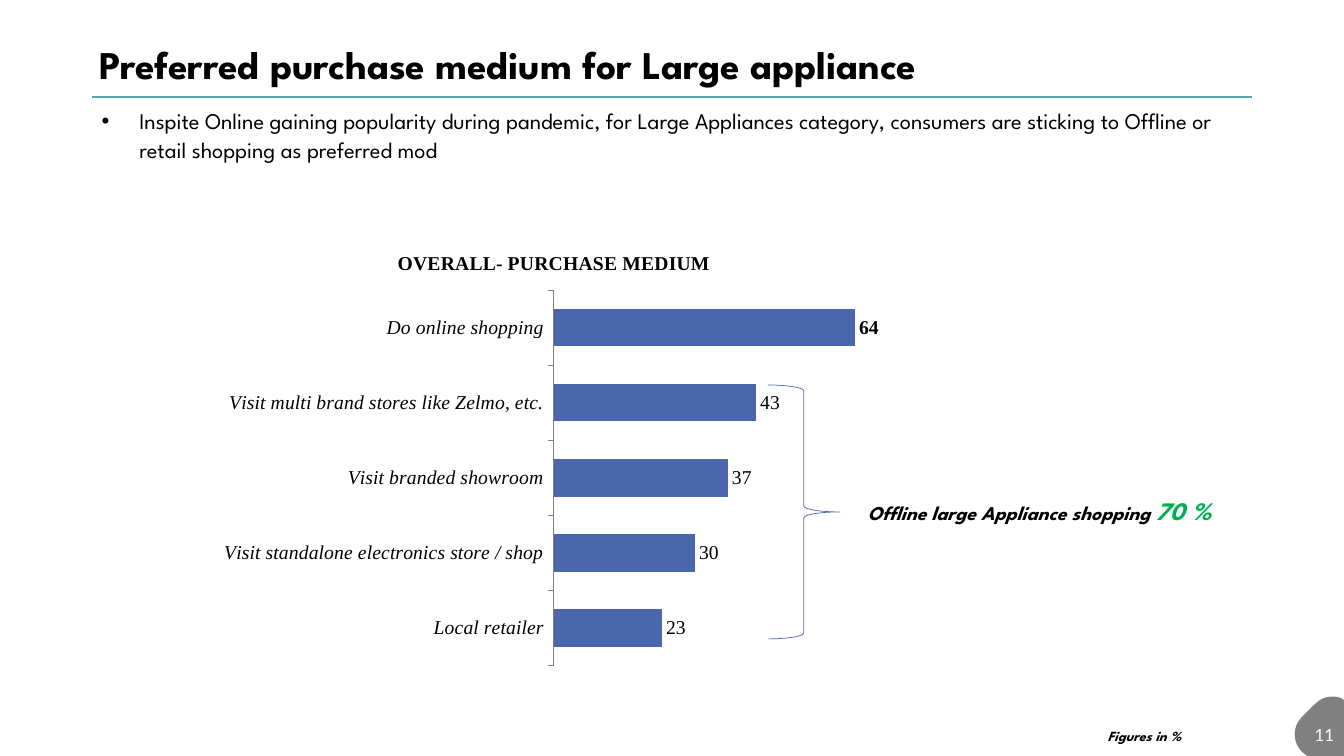
from lxml import etree
from pptx import Presentation
from pptx.chart.data import CategoryChartData
from pptx.dml.color import RGBColor
from pptx.enum.chart import XL_CHART_TYPE, XL_LABEL_POSITION, XL_TICK_LABEL_POSITION, XL_TICK_MARK
from pptx.enum.shapes import MSO_CONNECTOR, MSO_SHAPE
from pptx.enum.text import MSO_ANCHOR, PP_ALIGN
from pptx.oxml import parse_xml
from pptx.oxml.ns import nsdecls, qn
from pptx.util import Pt

BAR_CLUSTERED = XL_CHART_TYPE.BAR_CLUSTERED
OUTSIDE_END = XL_LABEL_POSITION.OUTSIDE_END
TICKS_OUTSIDE = XL_TICK_MARK.OUTSIDE
LABELS_LOW = XL_TICK_LABEL_POSITION.LOW
STRAIGHT = MSO_CONNECTOR.STRAIGHT
RIGHT_BRACE = MSO_SHAPE.RIGHT_BRACE
TOP, MIDDLE = MSO_ANCHOR.TOP, MSO_ANCHOR.MIDDLE
LEFT, RIGHT = PP_ALIGN.LEFT, PP_ALIGN.RIGHT

BLACK = RGBColor(0x00, 0x00, 0x00)
WHITE = RGBColor(0xFF, 0xFF, 0xFF)
GRAY = RGBColor(0x80, 0x80, 0x80)
TEAL = RGBColor(0x5A, 0xA2, 0xAE)
BLUE = RGBColor(0x4A, 0x66, 0xAC)
GREEN = RGBColor(0x00, 0xB0, 0x50)

HEADING_FONT = "League Spartan"
NUMBER_FONT = "Lato"
CHART_FONT = "Times New Roman"

PURCHASE_MEDIUMS = {
    "Do online shopping": 64,
    "Visit multi brand stores like Zelmo, etc.": 43,
    "Visit branded showroom": 37,
    "Visit standalone electronics store / shop": 30,
    "Local retailer": 23,
}
PLOT_LAYOUT = {"x": 0.5, "y": 0.13, "w": 0.48, "h": 0.85}


def set_font(font, name, size, color=BLACK, bold=False, italic=False):
    """Set typeface, size, colour and style of a font."""
    font.name = name
    font.size = Pt(size)
    font.color.rgb = color
    font.bold = bold
    font.italic = italic


def add_text(slide, box, text, size, font=HEADING_FONT, color=BLACK, bold=False,
             italic=False, align=LEFT, anchor=TOP, line_spacing=1.0, bullet_indent=0):
    """Add a one-paragraph text box and return its paragraph."""
    frame = slide.shapes.add_textbox(*map(Pt, box)).text_frame
    frame.word_wrap = True
    frame.vertical_anchor = anchor
    paragraph = frame.paragraphs[0]
    paragraph.alignment = align
    paragraph.line_spacing = line_spacing
    if bullet_indent:
        properties = paragraph._p.get_or_add_pPr()
        properties.set("marL", str(Pt(bullet_indent)))
        properties.set("indent", str(-Pt(bullet_indent)))
        bullet_font = etree.SubElement(properties, qn("a:buFont"))
        bullet_font.set("typeface", "Arial")
        etree.SubElement(properties, qn("a:buChar")).set("char", "•")
    run = paragraph.add_run()
    run.text = text
    set_font(run.font, font, size, color, bold, italic)
    return paragraph


def add_rule(slide, left, right, top):
    """Add the horizontal rule under the title."""
    rule = slide.shapes.add_connector(STRAIGHT, Pt(left), Pt(top), Pt(right), Pt(top))
    rule.line.color.rgb = TEAL
    rule.line.width = Pt(1.5)
    etree.SubElement(rule._element.spPr, qn("a:effectLst"))


def curve_points(start, control_1, control_2, end, steps=12):
    """Return points along a cubic curve."""
    return [
        tuple((1 - t) ** 3 * a + 3 * (1 - t) ** 2 * t * b + 3 * (1 - t) * t ** 2 * c + t ** 3 * d
              for a, b, c, d in zip(start, control_1, control_2, end))
        for t in (step / steps for step in range(steps + 1))
    ]


def add_corner_badge(slide):
    """Add the gray rounded badge in the bottom right corner."""
    outline = (
        curve_points((951.8, 497.5), (954.2, 497.5), (956.5, 498), (958.6, 499))
        + [(960, 500), (960, 540), (933.8, 540)]
        + curve_points((930.2, 537.1), (923, 529.9), (923, 519.1), (930.2, 511.9))
        + curve_points((938.9, 503.3), (942.5, 499.7), (946.8, 497.5), (951.8, 497.5))
    )
    points = [(Pt(x), Pt(y)) for x, y in outline]
    builder = slide.shapes.build_freeform(*points[0])
    builder.add_line_segments(points[1:], close=True)
    badge = builder.convert_to_shape()
    badge.shadow.inherit = False
    badge.fill.solid()
    badge.fill.fore_color.rgb = GRAY
    badge.line.fill.background()


def add_brace(slide, box):
    """Add the brace that groups the offline mediums."""
    brace = slide.shapes.add_shape(RIGHT_BRACE, *map(Pt, box))
    brace.shadow.inherit = False
    brace.fill.background()
    brace.line.color.rgb = BLUE
    brace.line.width = Pt(0.5)


def set_plot_layout(chart):
    """Fix the inner plot area as shares of the chart."""
    values = "".join(f'<c:{key} val="{value}"/>' for key, value in PLOT_LAYOUT.items())
    layout = parse_xml(
        f'<c:layout {nsdecls("c")}><c:manualLayout><c:layoutTarget val="inner"/>'
        f'<c:xMode val="edge"/><c:yMode val="edge"/>{values}</c:manualLayout></c:layout>')
    plot_area = chart._chartSpace.chart.plotArea
    for old_layout in plot_area.findall(qn("c:layout")):
        plot_area.remove(old_layout)
    plot_area.insert(0, layout)


def add_medium_chart(slide, box):
    """Add the bar chart of purchase mediums."""
    data = CategoryChartData()
    data.categories = list(PURCHASE_MEDIUMS)
    data.add_series("Series 1", list(PURCHASE_MEDIUMS.values()))
    chart = slide.shapes.add_chart(BAR_CLUSTERED, *map(Pt, box), data).chart
    set_font(chart.font, NUMBER_FONT, 18)
    chart.has_legend = False
    chart.has_title = True
    title = chart.chart_title.text_frame
    title.text = "OVERALL- PURCHASE MEDIUM"
    set_font(title.paragraphs[0].runs[0].font, CHART_FONT, 14, bold=True)
    set_plot_layout(chart)

    categories = chart.category_axis
    categories.reverse_order = True
    categories.major_tick_mark = TICKS_OUTSIDE
    categories.tick_label_position = LABELS_LOW
    categories.format.line.color.rgb = GRAY
    categories.format.line.width = Pt(0.75)
    set_font(categories.tick_labels.font, CHART_FONT, 14, italic=True)
    values = chart.value_axis
    values.visible = False
    values.has_major_gridlines = False
    values.minimum_scale, values.maximum_scale = 0, 70

    plot = chart.plots[0]
    plot.gap_width = 100
    plot.vary_by_categories = False
    series = plot.series[0]
    series.format.fill.solid()
    series.format.fill.fore_color.rgb = BLUE
    labels = series.data_labels
    labels.show_value = True
    labels.position = OUTSIDE_END
    set_font(labels.font, CHART_FONT, 14)
    online_label = series.points[0].data_label
    set_font(online_label.font, CHART_FONT, 14, bold=True)
    online_label.position = OUTSIDE_END


def main():
    """Build the slide and save it."""
    presentation = Presentation()
    presentation.slide_width, presentation.slide_height = Pt(960), Pt(540)
    slide = presentation.slides.add_slide(presentation.slide_layouts[6])

    add_corner_badge(slide)
    add_rule(slide, 66, 894, 69)
    add_text(slide, (744, 510.5, 216, 28.8), "11", 12, font=NUMBER_FONT, color=WHITE,
             align=RIGHT, anchor=MIDDLE)
    add_medium_chart(slide, (150.5, 166.3, 490.3, 315.4))
    add_text(slide, (65.5, 72, 842.4, 47.5),
             "Inspite Online gaining popularity during pandemic, for Large Appliances category, "
             "consumers are sticking to Offline or retail shopping as preferred mod",
             16, anchor=MIDDLE, line_spacing=1.07, bullet_indent=27)
    add_text(slide, (64, 24, 878.4, 47.5), "Preferred purchase medium for Large appliance",
             28, bold=True, anchor=MIDDLE, line_spacing=0.9)
    add_brace(slide, (548.6, 275, 51.1, 181.4))
    offline = add_text(slide, (612.7, 350.6, 306.7, 28.8), "Offline large Appliance shopping ",
                       14, bold=True, italic=True)
    share = offline.add_run()
    share.text = "70 %"
    set_font(share.font, HEADING_FONT, 18, GREEN, bold=True, italic=True)
    add_text(slide, (784, 516.2, 73.4, 19.4), "Figures in %", 10, bold=True, italic=True)
    presentation.save("out.pptx")


if __name__ == "__main__":
    main()
